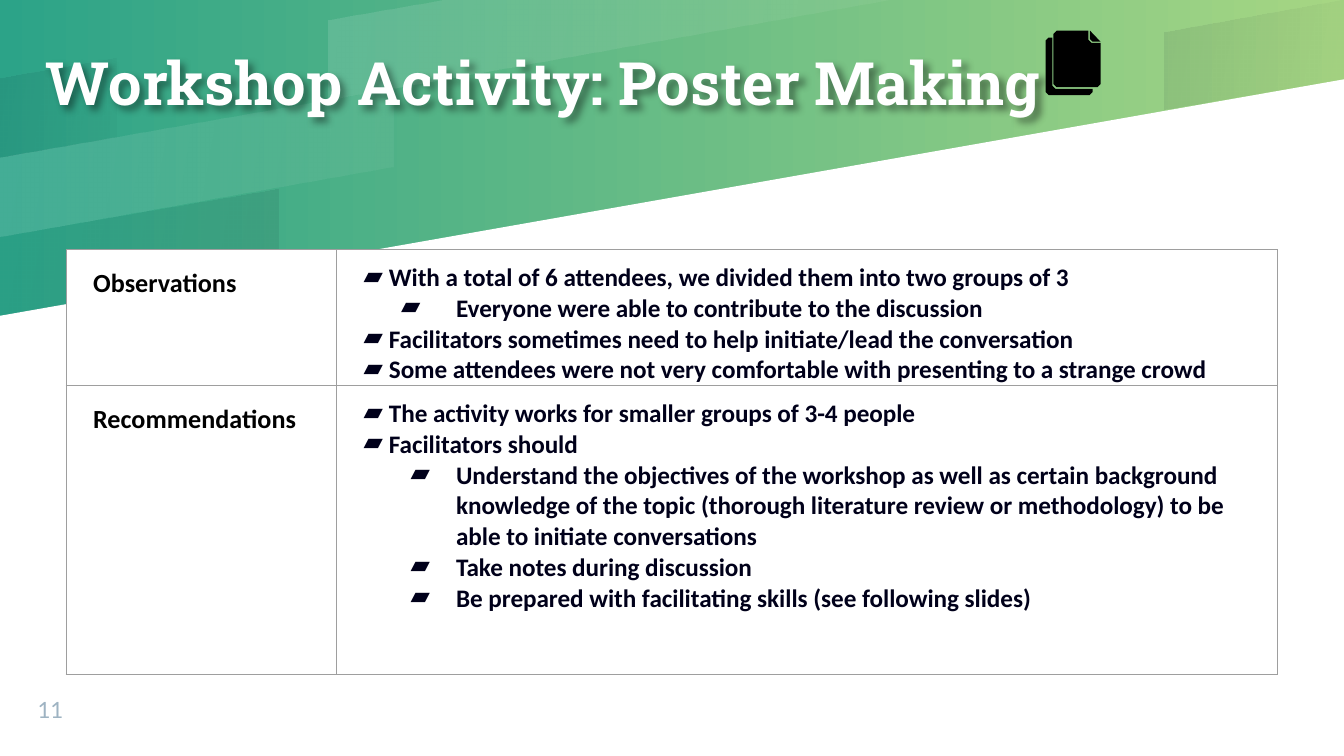
from dataclasses import dataclass

from lxml.etree import SubElement
from pptx import Presentation
from pptx.dml.color import RGBColor
from pptx.enum.text import MSO_ANCHOR, MSO_AUTO_SIZE, PP_ALIGN
from pptx.oxml.ns import qn
from pptx.util import Cm, Pt


@dataclass(frozen=True)
class Theme:
    """Colours, fonts and type sizes of the deck."""

    teal: str = "2CA388"
    lime: str = "A6D683"
    white: str = "FFFFFF"
    black: str = "000000"
    ink: str = "00001A"
    number: str = "9EB3C2"
    border: str = "9E9E9E"
    title_font: str = "Roboto Slab"
    number_font: str = "Lato"
    table_font: str = "Calibri"
    title_size: float = 32
    label_size: float = 14
    item_size: float = 13.5
    number_size: float = 12
    border_width: float = 0.75


class SlideBuilder:
    """Draws styled elements on the current slide."""

    def __init__(self, slide, theme):
        """Keep the slide and its theme."""
        self.slide = slide
        self.theme = theme

    def style_runs(self, paragraph, font, size, color, bold=False):
        """Format every run of a paragraph."""
        for run in paragraph.runs:
            run.font.name = font
            run.font.size = Pt(size)
            run.font.bold = bold
            run.font.color.rgb = RGBColor.from_string(color)

    def set_gradient(self, fill, colors, angle=0, opacities=()):
        """Apply a two-stop linear gradient with optional opacities in percent."""
        fill.gradient()
        fill.gradient_angle = angle
        for stop, position, color in zip(fill.gradient_stops, (0, 1), colors):
            stop.position = position
            stop.color.rgb = RGBColor.from_string(color)
        colour_elements = fill._xPr.iter(qn("a:srgbClr"))
        for element, opacity in zip(colour_elements, opacities):
            SubElement(element, qn("a:alpha"), val=str(opacity * 1000))

    def add_background(self):
        """Fill the slide from teal to lime."""
        self.set_gradient(self.slide.background.fill, (self.theme.teal, self.theme.lime))

    def add_polygon(self, points, color, opacities=()):
        """Draw a closed outline, solid or fading between two opacities."""
        corners = [(Cm(x), Cm(y)) for x, y in points]
        builder = self.slide.shapes.build_freeform(*corners[0])
        builder.add_line_segments(corners[1:], close=True)
        shape = builder.convert_to_shape()
        shape.shadow.inherit = False
        shape.line.fill.background()
        if opacities:
            self.set_gradient(shape.fill, (color, color), 350, opacities)
        else:
            shape.fill.solid()
            shape.fill.fore_color.rgb = RGBColor.from_string(color)

    def set_text_frame(self, frame, anchor):
        """Remove margins and fix wrapping and anchoring."""
        frame.margin_left = frame.margin_right = frame.margin_top = frame.margin_bottom = 0
        frame.auto_size = MSO_AUTO_SIZE.NONE
        frame.word_wrap = True
        frame.vertical_anchor = anchor

    def add_title(self, text, left, top, width, height):
        """Place the title placeholder with a soft text shadow."""
        title = self.slide.shapes.title
        title.left, title.top, title.width, title.height = map(Cm, (left, top, width, height))
        title.fill.background()
        title.text_frame.text = text
        self.set_text_frame(title.text_frame, MSO_ANCHOR.MIDDLE)
        paragraph = title.text_frame.paragraphs[0]
        paragraph.alignment = PP_ALIGN.LEFT
        self.style_runs(paragraph, self.theme.title_font, self.theme.title_size, self.theme.white, True)
        effects = SubElement(title._element.spPr, qn("a:effectLst"))
        shadow = SubElement(effects, qn("a:outerShdw"), blurRad="50800", dist="38100", dir="2700000")
        color = SubElement(shadow, qn("a:srgbClr"), val=self.theme.black)
        SubElement(color, qn("a:alpha"), val="40000")
        self.slide.shapes._spTree.append(title._element)

    def add_number(self, text, left, top, width, height):
        """Add the page number."""
        box = self.slide.shapes.add_textbox(*map(Cm, (left, top, width, height)))
        box.text_frame.text = text
        self.set_text_frame(box.text_frame, MSO_ANCHOR.BOTTOM)
        self.style_runs(
            box.text_frame.paragraphs[0], self.theme.number_font, self.theme.number_size, self.theme.number
        )

    def set_cell(self, cell):
        """Give a cell its margins, fill and borders."""
        cell.margin_left = cell.margin_right = Cm(0.51)
        cell.margin_top, cell.margin_bottom = Cm(0.25), 0
        cell.fill.solid()
        cell.fill.fore_color.rgb = RGBColor.from_string(self.theme.white)
        properties = cell._tc.get_or_add_tcPr()
        for index, side in enumerate(("lnL", "lnR", "lnT", "lnB")):
            line = SubElement(properties, qn(f"a:{side}"), w=str(Pt(self.theme.border_width)))
            fill = SubElement(line, qn("a:solidFill"))
            SubElement(fill, qn("a:srgbClr"), val=self.theme.border)
            properties.insert(index, line)

    def set_bullet(self, paragraph, margin, hanging):
        """Give a paragraph a slanted bar bullet and a hanging indent."""
        properties = paragraph._p.get_or_add_pPr()
        properties.set("marL", str(Cm(margin)))
        properties.set("indent", str(-Cm(hanging)))
        color = SubElement(properties, qn("a:buClr"))
        SubElement(color, qn("a:srgbClr"), val=self.theme.ink)
        SubElement(properties, qn("a:buChar"), char="▰")

    def add_table(self, rows, left, top, widths, heights):
        """Add rows of a label, its bullet items and the hanging indent of sub-items."""
        frame = self.slide.shapes.add_table(
            len(rows), len(widths), Cm(left), Cm(top), Cm(sum(widths)), Cm(sum(heights))
        )
        table = frame.table
        table.first_row = table.horz_banding = False
        for column, width in zip(table.columns, widths):
            column.width = Cm(width)
        for row, height, (label, items, sub_hanging) in zip(table.rows, heights, rows):
            row.height = Cm(height)
            label_cell, item_cell = row.cells
            label_cell.text_frame.text = label
            paragraph = label_cell.text_frame.paragraphs[0]
            paragraph.line_spacing = 1.15
            self.style_runs(paragraph, self.theme.table_font, self.theme.label_size, self.theme.black, True)
            item_cell.text_frame.text = "\n".join(text for level, text in items)
            item_cell.text_frame.paragraphs[0].space_before = Pt(6)
            for paragraph, (level, text) in zip(item_cell.text_frame.paragraphs, items):
                paragraph.level = level
                self.set_bullet(paragraph, *((1.75, sub_hanging) if level else (0.48, 0.56)))
                self.style_runs(paragraph, self.theme.table_font, self.theme.item_size, self.theme.ink, True)
            for cell in row.cells:
                self.set_cell(cell)


def main():
    """Build and save the workshop slide."""
    theme = Theme()
    presentation = Presentation()
    presentation.slide_width, presentation.slide_height = Cm(25.4), Cm(14.29)
    slide = presentation.slides.add_slide(presentation.slide_layouts[5])
    builder = SlideBuilder(slide, theme)
    builder.add_background()
    bands = [
        ([(0, 14.29), (25.4, 14.29), (25.4, 1.5), (0, 5.97)], theme.white, ()),
        ([(8.43, 0), (6.2, 0.38), (6.2, 1.88), (16.89, 0)], theme.white, (12, 5)),
        ([(0, 1.47), (0, 2.97), (2.21, 2.59), (2.21, 1.09)], theme.ink, (8, 2)),
        ([(0, 4.47), (0, 5.97), (5.26, 5.05), (5.26, 3.56)], theme.ink, (2, 8)),
        ([(25.4, 0), (25.37, 0), (22, 0.61), (22, 2.08), (25.4, 1.5)], theme.ink, (8, 2)),
        ([(0, 2.97), (0, 4.47), (7.44, 3.15), (7.44, 1.68)], theme.white, (12, 5)),
    ]
    for points, color, opacities in bands:
        builder.add_polygon(points, color, opacities)
    builder.add_title("Workshop Activity: Poster Making", 0.86, -0.97, 19.91, 5.03)
    builder.add_number("11", 0.71, 12.98, 1.35, 0.69)
    back_sheet = [(19.82, 0.71), (19.76, 0.77), (19.76, 1.74), (19.82, 1.8), (20.59, 1.8),
                  (20.65, 1.74), (20.65, 1.68), (19.95, 1.68), (19.89, 1.62), (19.89, 0.71)]
    front_sheet = [(19.97, 0.58), (19.91, 0.64), (19.91, 1.59), (19.97, 1.65), (20.74, 1.65),
                   (20.8, 1.59), (20.8, 0.81), (20.63, 0.81), (20.57, 0.75), (20.57, 0.58)]
    fold = [(20.6, 0.58), (20.6, 0.74), (20.65, 0.79), (20.8, 0.79)]
    for points in (back_sheet, front_sheet, fold):
        builder.add_polygon(points, theme.black)
    observations = [
        (0, "With a total of 6 attendees, we divided them into two groups of 3"),
        (1, "Everyone were able to contribute to the discussion"),
        (0, "Facilitators sometimes need to help initiate/lead the conversation"),
        (0, "Some attendees were not very comfortable with presenting to a strange crowd"),
    ]
    recommendations = [
        (0, "The activity works for smaller groups of 3-4 people"),
        (0, "Facilitators should"),
        (1, "Understand the objectives of the workshop as well as certain background knowledge of the topic "
            "(thorough literature review or methodology) to be able to initiate conversations"),
        (1, "Take notes during discussion"),
        (1, "Be prepared with facilitating skills (see following slides)"),
    ]
    rows = [("Observations", observations, 1.04), ("Recommendations", recommendations, 0.86)]
    builder.add_table(rows, 1.25, 4.72, (5.11, 17.78), (2.54, 5.46))
    presentation.save("out.pptx")


if __name__ == "__main__":
    main()
